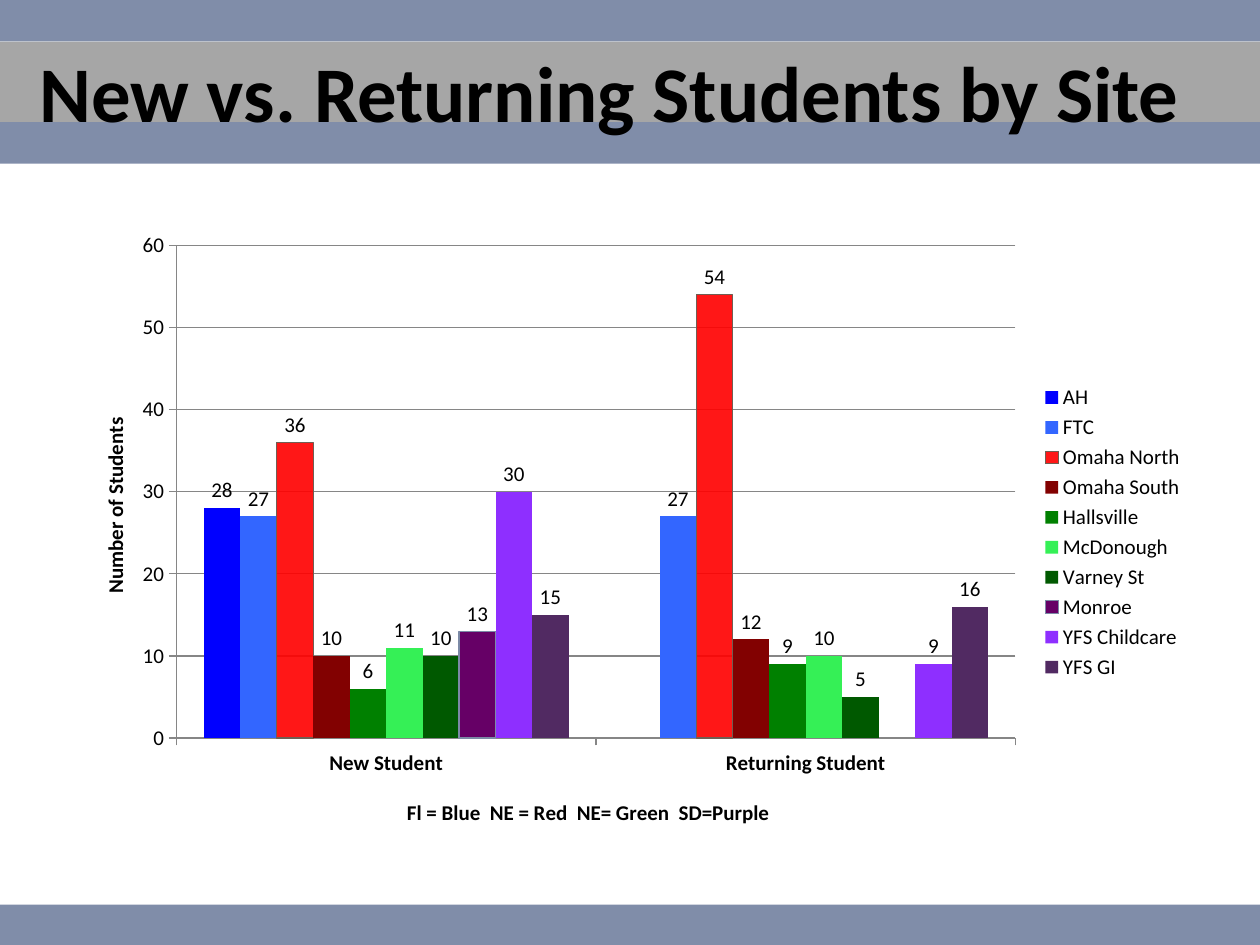
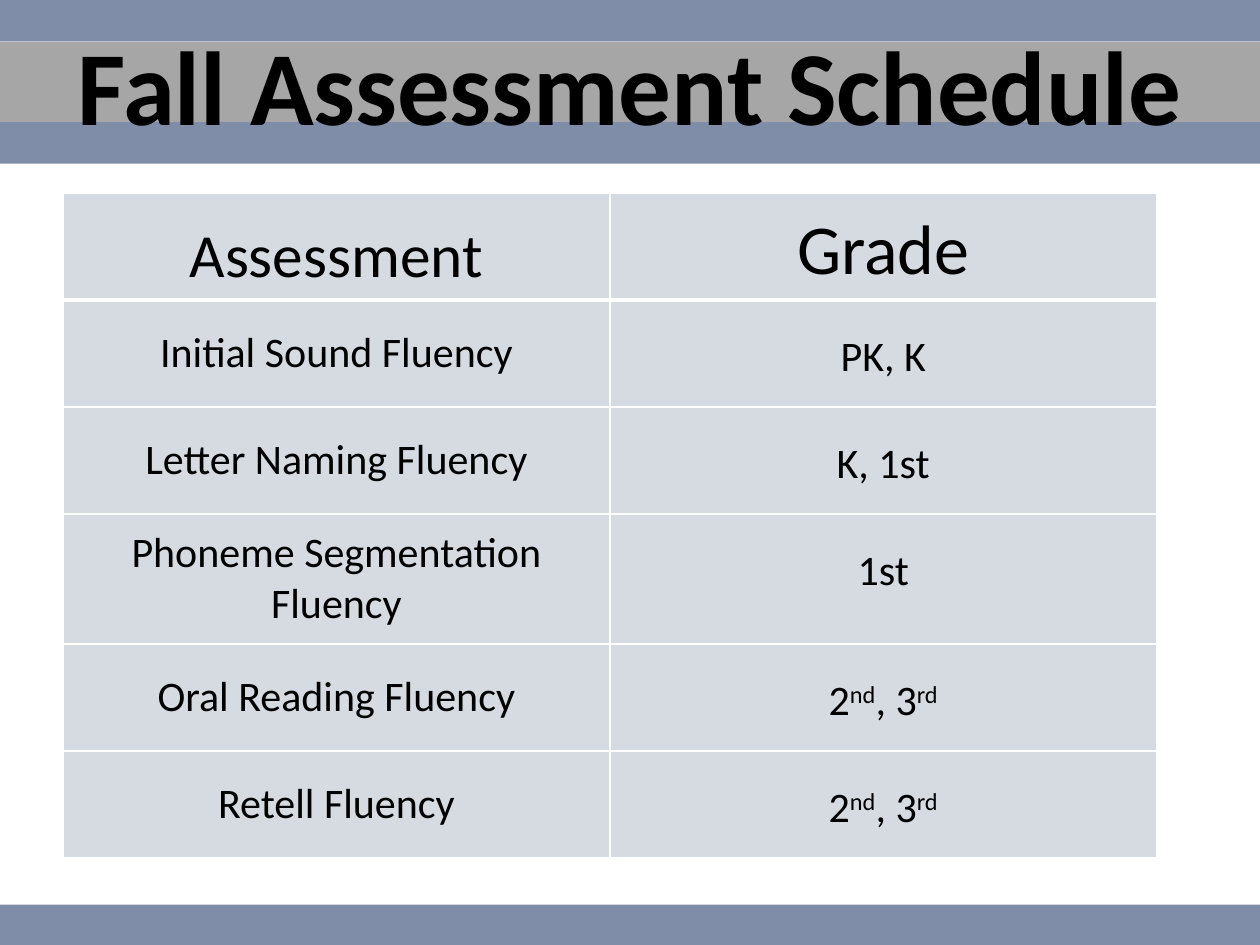
from lxml import etree
from pptx import Presentation
from pptx.chart.data import CategoryChartData
from pptx.dml.color import RGBColor
from pptx.enum import chart as charts, shapes, text
from pptx.oxml import ns
from pptx.util import Inches, Pt

FONT = "Calibri"
BLACK, WHITE = "000000", "FFFFFF"
BAND_BLUE, BAND_GREY = "808DA9", "A6A6A6"
CELL_FILL, GRID_GREY = "D6DBE1", "868686"
BANDS = [  # top, height, colour
    (0.33, 0.64, BAND_GREY),
    (0, 0.33, BAND_BLUE),
    (0.97, 0.33, BAND_BLUE),
    (7.18, 0.33, BAND_BLUE),
]

SITES = [  # name, colour, new students, returning students
    ("AH", "0000FF", 28, None),
    ("FTC", "3366FF", 27, 27),
    ("Omaha North", "FF0000", 36, 54),
    ("Omaha South", "820101", 10, 12),
    ("Hallsville", "008000", 6, 9),
    ("McDonough", "35F056", 11, 10),
    ("Varney St", "005900", 10, 5),
    ("Monroe", "660066", 13, None),
    ("YFS Childcare", "8E2FFF", 30, 9),
    ("YFS GI", "512A62", 15, 16),
]
SITE_OUTLINES = {"Omaha North": "705E53", "Monroe": "7C8AA6"}

SECOND_AND_THIRD = [("2", False), ("nd", True), (", 3", False), ("rd", True)]
ASSESSMENTS = [  # name, grades as (text, superscript) pieces
    ("Initial Sound Fluency", [("PK, K", False)]),
    ("Letter Naming Fluency", [("K, 1st", False)]),
    ("Phoneme Segmentation Fluency", [("1st", False)]),
    ("Oral Reading Fluency", SECOND_AND_THIRD),
    ("Retell Fluency", SECOND_AND_THIRD),
]


def rgb(hex_colour):
    return RGBColor.from_string(hex_colour)


def set_fill(fill, hex_colour):
    fill.solid()
    fill.fore_color.rgb = rgb(hex_colour)


def set_line(line, hex_colour, points=0.75):
    set_fill(line.fill, hex_colour)
    line.width = Pt(points)


def set_font(font, size, bold=False):
    font.name = FONT
    font.size = Pt(size)
    font.bold = bold
    font.color.rgb = rgb(BLACK)


def add_child(parent, tag, **attributes):
    child = etree.SubElement(parent, ns.qn(tag))
    for name, value in attributes.items():
        child.set(name, str(value))
    return child


def add_master_bands(presentation, slide):
    """Build the bands on a slide, then move them to the back of the master."""
    master_tree = presentation.slide_master.shapes.element
    for index, (top, height, colour) in enumerate(BANDS):
        band = slide.shapes.add_shape(
            shapes.MSO_SHAPE.RECTANGLE, 0, Inches(top),
            presentation.slide_width, Inches(height))
        band.name = f"Band {index + 1}"
        band.shadow.inherit = False
        set_fill(band.fill, colour)
        band.line.fill.background()
        band.element.nvSpPr.cNvPr.set("id", str(100 + index))
        master_tree.insert(2 + index, band.element)


def format_title(slide, wording, box, size):
    title = slide.shapes.title
    title.left, title.top, title.width, title.height = map(Inches, box)
    frame = title.text_frame
    frame.text = wording
    frame.word_wrap = True
    frame.auto_size = text.MSO_AUTO_SIZE.NONE
    frame.vertical_anchor = text.MSO_ANCHOR.MIDDLE
    paragraph = frame.paragraphs[0]
    paragraph.alignment = text.PP_ALIGN.CENTER
    set_font(paragraph.font, size, bold=True)


def place_in_chart(element, x, y, w=None, h=None):
    """Give a plot area or axis title a place in fractions of the chart."""
    layout = element.find(ns.qn("c:layout"))
    if layout is None:
        layout = add_child(element, "c:layout")
        before = element.find(ns.qn("c:tx"))
        if before is None:
            element.insert(0, layout)
        else:
            before.addnext(layout)
    for child in list(layout):
        layout.remove(child)
    manual = add_child(layout, "c:manualLayout")
    if w is not None:
        add_child(manual, "c:layoutTarget", val="inner")
    for mode in ("c:xMode", "c:yMode"):
        add_child(manual, mode, val="edge")
    for tag, value in (("c:x", x), ("c:y", y), ("c:w", w), ("c:h", h)):
        if value is not None:
            add_child(manual, tag, val=value)


def format_axis(axis, title, title_place, bold=False):
    axis.major_tick_mark = charts.XL_TICK_MARK.OUTSIDE
    axis.minor_tick_mark = charts.XL_TICK_MARK.NONE
    set_line(axis.format.line, GRID_GREY)
    set_font(axis.tick_labels.font, 12, bold)
    frame = axis.axis_title.text_frame
    frame.text = title
    set_font(frame.paragraphs[0].font, 12, bold=True)
    place_in_chart(axis.axis_title._element, *title_place)


def add_site_chart(slide, box):
    data = CategoryChartData()
    data.categories = ["New Student", "Returning Student"]
    for name, _, *counts in SITES:
        data.add_series(name, counts)
    chart = slide.shapes.add_chart(
        charts.XL_CHART_TYPE.COLUMN_CLUSTERED, *map(Inches, box), data).chart
    set_font(chart.font, 12)
    chart.has_title = False
    chart.has_legend = True
    chart.legend.position = charts.XL_LEGEND_POSITION.RIGHT
    chart.legend.include_in_layout = False
    set_font(chart.legend.font, 12)

    format_axis(chart.category_axis, "Fl = Blue  NE = Red  NE= Green  SD=Purple",
                (0.3, 0.92), bold=True)
    counts_axis = chart.value_axis
    format_axis(counts_axis, "Number of Students", (0.03, 0.31))
    counts_axis.minimum_scale, counts_axis.maximum_scale = 0, 60
    counts_axis.major_unit = 10
    set_line(counts_axis.major_gridlines.format.line, GRID_GREY)
    place_in_chart(chart._chartSpace.chart.plotArea, 0.1, 0.04, 0.74, 0.79)

    plot = chart.plots[0]
    plot.vary_by_categories = False
    plot.gap_width, plot.overlap = 150, 0
    plot.has_data_labels = True
    plot.data_labels.show_value = True
    plot.data_labels.position = charts.XL_LABEL_POSITION.OUTSIDE_END
    set_font(plot.data_labels.font, 12)
    for series, (name, colour, *_) in zip(plot.series, SITES):
        series.invert_if_negative = False
        set_fill(series.format.fill, colour)
        if name in SITE_OUTLINES:
            set_line(series.format.line, SITE_OUTLINES[name])
        if name == "Omaha North":
            fill_colour = series._element.spPr.find(".//" + ns.qn("a:srgbClr"))
            add_child(fill_colour, "a:alpha", val=91000)


def fill_cell(cell, pieces, size, anchor, line_spacing=None, bottom_border=1):
    properties = cell._tc.get_or_add_tcPr()
    for side in "LRTB":
        points = bottom_border if side == "B" else 1
        border = add_child(properties, f"a:ln{side}", w=int(Pt(points)))
        add_child(add_child(border, "a:solidFill"), "a:srgbClr", val=WHITE)
    set_fill(cell.fill, CELL_FILL)
    cell.vertical_anchor = anchor
    paragraph = cell.text_frame.paragraphs[0]
    paragraph.alignment = text.PP_ALIGN.CENTER
    paragraph.line_spacing = line_spacing
    set_font(paragraph.font, size)
    for wording, superscript in pieces:
        run = paragraph.add_run()
        run.text = wording
        set_font(run.font, size)
        if superscript:
            run._r.get_or_add_rPr().set("baseline", "30000")


def add_assessment_table(slide, box):
    table = slide.shapes.add_table(
        len(ASSESSMENTS) + 1, 2, *map(Inches, box)).table
    table.first_row = table.horz_banding = False
    for column in table.columns:
        column.width = Inches(box[2] / 2)
    for row in table.rows:
        row.height = Inches(0.85)
    table.rows[3].height = Inches(1.03)

    for column, (heading, size) in enumerate([("Assessment", 35), ("Grade", 40)]):
        fill_cell(table.cell(0, column), [(heading, False)], size,
                  text.MSO_ANCHOR.BOTTOM, bottom_border=3)
    for row, (name, grades) in enumerate(ASSESSMENTS, start=1):
        fill_cell(table.cell(row, 0), [(name, False)], 24, text.MSO_ANCHOR.MIDDLE)
        fill_cell(table.cell(row, 1), grades, 24, text.MSO_ANCHOR.TOP,
                  line_spacing=1.5)


def main():
    presentation = Presentation()
    presentation.slide_width, presentation.slide_height = Inches(10), Inches(7.5)
    title_only = presentation.slide_layouts[5]

    students = presentation.slides.add_slide(title_only)
    add_master_bands(presentation, students)
    format_title(students, "New vs. Returning Students by Site",
                 (0.17, 0.38, 9.33, 0.68), 45)
    add_site_chart(students, (0.5, 1.75, 9, 4.95))

    schedule = presentation.slides.add_slide(title_only)
    format_title(schedule, "Fall Assessment Schedule", (0.5, 0.3, 9, 0.72), 60)
    add_assessment_table(schedule, (0.5, 1.53, 8.68, 5.26))

    presentation.save("out.pptx")


if __name__ == "__main__":
    main()
